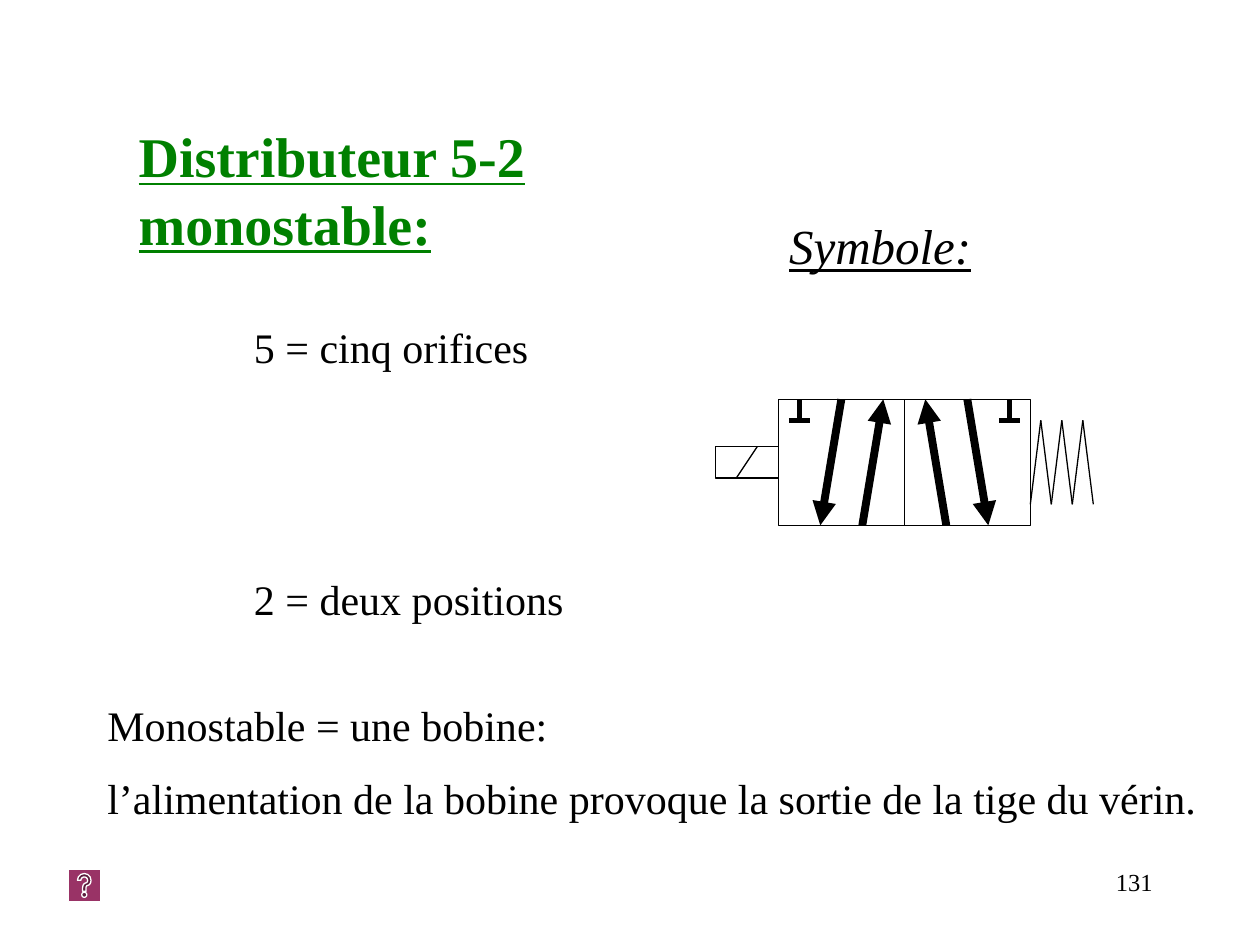
from dataclasses import dataclass
from itertools import pairwise

from lxml.etree import SubElement
from pptx import Presentation
from pptx.dml.color import RGBColor
from pptx.enum.shapes import MSO_CONNECTOR as Link, MSO_SHAPE as Kind
from pptx.enum.text import MSO_ANCHOR as Anchor, MSO_AUTO_SIZE as Fit, PP_ALIGN as Align
from pptx.oxml.ns import qn
from pptx.util import Cm, Pt

FONT = "Times New Roman"
BLACK, WHITE, GREEN, PLUM = "000000", "FFFFFF", "008000", "993366"

# The symbol sits on a grid: each square is six steps wide
LEFT, TOP = 15.69, 8.05
STEP = 2.54 / 6


@dataclass
class Note:
    left: float
    top: float
    width: float
    height: float
    lines: list[str]
    size: int = 24
    color: str = BLACK
    bold: bool = False
    italic: bool = False
    under: bool = False
    align: Align = Align.LEFT


@dataclass
class Stroke:
    x1: float
    y1: float
    x2: float
    y2: float
    width: float = 0.75
    arrow: bool = False


def color(code: str) -> RGBColor:
    return RGBColor.from_string(code)


def grid_x(step: float) -> Cm:
    return Cm(LEFT + step * STEP)


def grid_y(step: float) -> Cm:
    return Cm(TOP + step * STEP)


def write(box, note: Note) -> None:
    box.left, box.top = Cm(note.left), Cm(note.top)
    box.width, box.height = Cm(note.width), Cm(note.height)
    frame = box.text_frame
    frame.word_wrap, frame.auto_size = True, Fit.NONE
    frame.vertical_anchor = Anchor.TOP
    frame.text = "\n".join(note.lines)
    for i, para in enumerate(frame.paragraphs):
        para.alignment = note.align
        para.space_before = Pt(13 if i else 0)
        props = para._p.get_or_add_pPr()
        props.set("marL", "0")
        props.set("indent", "0")
        SubElement(props, qn("a:buNone"))
        font = para.font
        font.name, font.size = FONT, Pt(note.size)
        font.bold, font.italic = note.bold, note.italic
        font.underline = note.under
        font.color.rgb = color(note.color)


def block(shapes, kind: Kind, left: Cm, top: Cm, width: Cm, height: Cm,
          fill: str = WHITE, edge: str = BLACK) -> None:
    shape = shapes.add_shape(kind, left, top, width, height)
    shape.shadow.inherit = False
    shape.fill.solid()
    shape.fill.fore_color.rgb = color(fill)
    shape.line.color.rgb = color(edge)
    shape.line.width = Pt(0.75)


def draw(shapes, stroke: Stroke) -> None:
    line = shapes.add_connector(
        Link.STRAIGHT, grid_x(stroke.x1), grid_y(stroke.y1),
        grid_x(stroke.x2), grid_y(stroke.y2))
    line.line.color.rgb = color(BLACK)
    line.line.width = Pt(stroke.width)
    if stroke.arrow:
        SubElement(line.line._get_or_add_ln(), qn("a:tailEnd"), type="triangle")
    SubElement(line._element.spPr, qn("a:effectLst"))


def main() -> None:
    deck = Presentation()
    deck.slide_width, deck.slide_height = Cm(25.4), Cm(19.05)
    slide = deck.slides.add_slide(deck.slide_layouts[1])
    shapes = slide.shapes

    # Title and explanation
    write(shapes.title, Note(2.54, 2.33, 9.53, 2.96, ["Distributeur 5-2 monostable:"],
                             32, GREEN, bold=True, under=True))
    write(slide.placeholders[1], Note(1.91, 13.97, 22.65, 4.32, [
        "Monostable = une bobine:",
        "l’alimentation de la bobine provoque la sortie de la tige du vérin."]))

    # Labels and page number
    notes = [
        Note(4.87, 6.35, 14.61, 1.27, ["5 = cinq orifices"]),
        Note(4.87, 11.43, 7.41, 1.27, ["2 = deux positions"]),
        Note(15.66, 4.23, 7.83, 1.45, ["Symbole:"], 28, italic=True, under=True),
        Note(18.2, 17.35, 5.29, 1.27, ["131"], 14, align=Align.RIGHT),
    ]
    for note in notes:
        write(shapes.add_textbox(0, 0, 0, 0), note)

    # Two positions and the coil
    for x, y, wide, high in [(6, 0, 6, 6), (0, 0, 6, 6), (-3, 2.25, 3, 1.5)]:
        block(shapes, Kind.RECTANGLE, grid_x(x), grid_y(y),
              Cm(wide * STEP), Cm(high * STEP))
    strokes = [Stroke(-1, 2.25, -2, 3.75)]

    # Return spring
    points = [(12 + i / 2, 1 if i % 2 else 5) for i in range(7)]
    strokes += [Stroke(*a, *b) for a, b in pairwise(points)]

    # Flow paths, from tail to arrowhead
    for x1, y1, x2, y2 in [(3, 0, 2, 6), (4, 6, 5, 0), (8, 6, 7, 0), (9, 0, 10, 6)]:
        strokes.append(Stroke(x1, y1, x2, y2, 4.5, True))

    # Closed ports
    for x in (1, 11):
        strokes += [Stroke(x, 0, x, 1, 3), Stroke(x - 0.5, 1, x + 0.5, 1, 3)]
    for stroke in strokes:
        draw(shapes, stroke)

    # Help button
    block(shapes, Kind.ACTION_BUTTON_HELP, Cm(1.38), Cm(17.53), Cm(0.64), Cm(0.64),
          PLUM, WHITE)

    deck.save("out.pptx")


if __name__ == "__main__":
    main()
